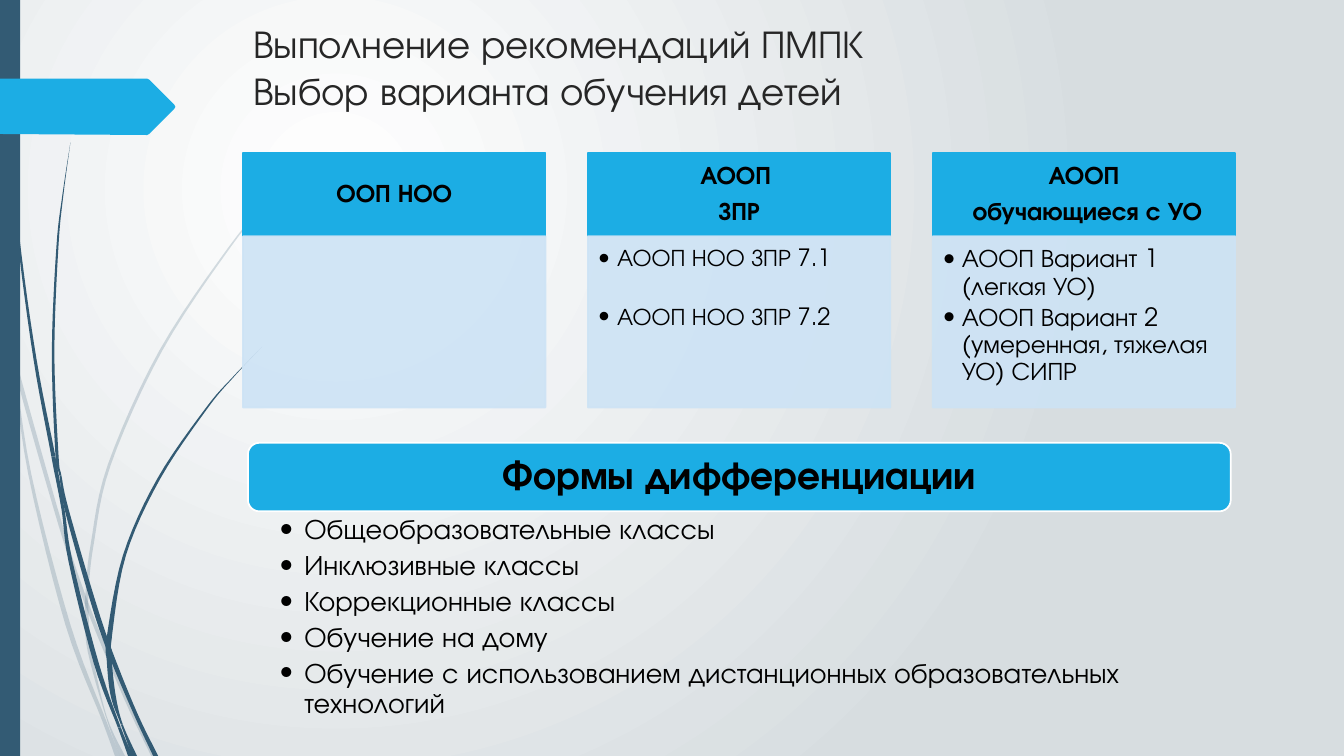
"""Build the slide on choosing a school programme for each child."""
from dataclasses import dataclass

from lxml import etree
from pptx import Presentation
from pptx.dml.color import RGBColor
from pptx.enum.shapes import MSO_SHAPE
from pptx.enum.text import MSO_ANCHOR, PP_ALIGN
from pptx.oxml.ns import qn
from pptx.shapes.autoshape import Shape
from pptx.slide import Slide
from pptx.util import Emu, Pt

RECT, ROUND = MSO_SHAPE.RECTANGLE, MSO_SHAPE.ROUNDED_RECTANGLE
TOP, MIDDLE = MSO_ANCHOR.TOP, MSO_ANCHOR.MIDDLE
LEFT, CENTER = PP_ALIGN.LEFT, PP_ALIGN.CENTER
WIDTH, HEIGHT = 12192000, 6858000
ROWS = 75
CELL = HEIGHT / ROWS
STEPS = 6


@dataclass(frozen=True)
class Theme:
    font: str = "TeX Gyre Adventor"
    accent: str = "1CADE4"
    dark: str = "335B74"
    panel: str = "CDE3F5"
    white: str = "FFFFFF"
    edge: str = "D7DDE0"
    ink: str = "000000"
    title_ink: str = "262626"
    title: float = 27.9
    banner: float = 28
    forms: float = 20
    head: float = 18
    line: float = 1.25


@dataclass(frozen=True)
class Box:
    x: float
    y: float
    w: float
    h: float


@dataclass(frozen=True)
class Style:
    size: float
    inset: tuple[float, float, float, float]
    color: str
    bold: bool = False
    align: int = LEFT
    anchor: int = TOP
    spacing: float = 0.9
    after: float = 0
    hang: float = 0


@dataclass(frozen=True)
class Column:
    head: str
    items: str = ""
    size: float = 18
    skip: float = 0


@dataclass(frozen=True)
class Blade:
    alpha: int
    cuts: tuple[float, ...]
    rows: tuple[tuple[float, float, float], ...]


THEME = Theme()
TITLE = "Выполнение рекомендаций ПМПК\vВыбор варианта обучения детей"
COLUMNS = (
    Column("ООП НОО"),
    Column("АООП \nЗПР", "АООП НОО ЗПР 7.1\nАООП НОО ЗПР 7.2", 17, 21),
    Column("АООП\n обучающиеся с УО",
           "АООП Вариант 1 (легкая УО)\n"
           "АООП Вариант 2 (умеренная, тяжелая УО) СИПР"),
)
FORMS = "\n".join((
    "Общеобразовательные классы", "Инклюзивные классы",
    "Коррекционные классы", "Обучение на дому",
    "Обучение с использованием дистанционных образовательных технологий",
))
BLADES = (
    Blade(20, (35, 71.4), (
        (28.2, 0, 0), (29.9, 0, .4), (35, 1.1, 1.3), (47, 2.8, 3.1),
        (62, 6.5, 7), (71.4, 10.1, 10.5), (75, 11.4, 11.9))),
    Blade(20, (59.9,), (
        (34.5, 1.4, 1.4), (37.6, 1.7, 2.1), (52.1, 5.8, 6.2),
        (59.9, 8.4, 8.8), (69.3, 12.3, 12.7), (75, 15, 15.5))),
    Blade(20, (58.6, 61, 71.1), (
        (15.3, 31.2, 31.2), (19.7, 26.8, 26.9), (24.5, 22.7, 22.9),
        (34.8, 15.8, 16.1), (46.1, 10.7, 11), (54, 9, 9.3),
        (58.6, 8.5, 8.8), (61, 8.45, 8.8), (64.6, 8.7, 9.1),
        (71.1, 10.5, 10.6), (75, 11.9, 12.4))),
    Blade(100, (45.3, 50.5, 72.2), (
        (0, .3, .4), (11, .7, .8), (23.3, 1.7, 1.9), (35.5, 3.3, 3.6),
        (45.3, 5.1, 5.5), (50.5, 6.1, 6.4), (55.7, 6.8, 7.2),
        (65.8, 9.3, 9.8), (72.2, 11.7, 12), (75, 12.7, 13.2))),
    Blade(100, (47.2, 64.5), (
        (14.1, 7, 7), (19.3, 6.2, 6.3), (24.5, 5.6, 5.8),
        (34.9, 5.15, 5.4), (45, 5.5, 5.8), (47.2, 5.9, 6.1),
        (50.5, 6.4, 6.8), (59.1, 8.8, 9.3), (64.5, 10.6, 11.1),
        (70.7, 13.2, 13.6), (75, 15.2, 15.7))),
    Blade(100, (63.2, 65.6, 71.9), (
        (34.4, 26, 26), (37.4, 23.1, 23.2), (40.5, 20.4, 20.6),
        (47.5, 15.6, 15.9), (55.1, 12.2, 12.5), (63.2, 10.6, 11.1),
        (65.6, 10.6, 11.1), (69.1, 11, 11.5), (71.9, 12, 12.2),
        (75, 13.1, 13.6))),
)
ARROW = ((0, 7.8), (14.6, 7.8), (14.8, 7.9), (17.3, 10.4), (17.4, 10.6),
         (17.3, 10.8), (14.8, 13.3), (14.6, 13.4), (0, 13.3))


def cells(count: float) -> Emu:
    """Turn grid cells into a length."""
    return Emu(round(count * CELL))


def paint(shape: Shape, fill: str, line: str = "", alpha: int = 100) -> None:
    """Colour a shape and its outline."""
    shape.shadow.inherit = False
    shape.fill.solid()
    shape.fill.fore_color.rgb = RGBColor.from_string(fill)
    if line:
        shape.line.color.rgb = RGBColor.from_string(line)
        shape.line.width = Pt(THEME.line)
    else:
        shape.line.fill.background()
    if alpha < 100:
        for tint in shape.element.spPr.iter(qn("a:srgbClr")):
            etree.SubElement(tint, qn("a:alpha"), val=str(alpha * 1000))


def write(shape: Shape, text: str, style: Style) -> None:
    """Fill a shape with styled text."""
    frame = shape.text_frame
    frame.word_wrap = True
    frame.vertical_anchor = style.anchor
    (frame.margin_left, frame.margin_top,
     frame.margin_right, frame.margin_bottom) = map(cells, style.inset)
    frame.text = text
    for para in frame.paragraphs:
        para.alignment = style.align
        para.line_spacing = style.spacing
        para.space_after = Pt(style.after)
        if style.hang:
            props = para._p.get_or_add_pPr()
            props.set("marL", str(cells(style.hang)))
            props.set("indent", str(-cells(style.hang)))
            etree.SubElement(props, qn("a:buFont"), typeface=THEME.font)
            etree.SubElement(props, qn("a:buChar"), char="•")
        for run in para.runs:
            run.font.name = THEME.font
            run.font.size = Pt(style.size)
            run.font.bold = style.bold
            run.font.color.rgb = RGBColor.from_string(style.color)


def block(slide: Slide, kind: int, box: Box, fill: str, line: str = "",
          alpha: int = 100) -> Shape:
    """Add a painted preset shape."""
    shape = slide.shapes.add_shape(
        kind, *map(cells, (box.x, box.y, box.w, box.h)))
    paint(shape, fill, line, alpha)
    return shape


def label(slide: Slide, box: Box, text: str, style: Style) -> None:
    """Add a text box."""
    area = map(cells, (box.x, box.y, box.w, box.h))
    write(slide.shapes.add_textbox(*area), text, style)


def outline(slide: Slide, points: list, fill: str, alpha: int = 100) -> None:
    """Add a closed freeform through grid points."""
    first, *rest = [(cells(x), cells(y)) for x, y in points]
    pen = slide.shapes.build_freeform(*first)
    pen.add_line_segments(rest, close=True)
    paint(pen.convert_to_shape(), fill, alpha=alpha)


def smooth(rows: tuple) -> list:
    """Round off a row list with a Catmull-Rom curve."""
    ends = (rows[0], *rows, rows[-1])
    curve = []
    for quad in zip(ends, ends[1:], ends[2:], ends[3:]):
        for step in range(STEPS):
            t = step / STEPS
            curve.append([
                b + t * (c - a) / 2 + t * t * (2 * a - 5 * b + 4 * c - d) / 2
                + t ** 3 * (3 * b - a - 3 * c + d) / 2
                for a, b, c, d in zip(*quad)])
    return [*curve, rows[-1]]


def backdrop(slide: Slide) -> None:
    """Lay a round gradient behind the slide."""
    fill = slide.background.fill
    fill.gradient()
    for stop, color in zip(fill.gradient_stops, (THEME.white, THEME.edge)):
        stop.color.rgb = RGBColor.from_string(color)
    grad = next(slide.element.iter(qn("a:gradFill")))
    grad.remove(grad.find(qn("a:lin")))
    shade = etree.SubElement(grad, qn("a:path"), attrib={"path": "circle"})
    etree.SubElement(shade, qn("a:fillToRect"), l="50000", t="50000",
                     r="100000", b="100000")


def decor(slide: Slide) -> None:
    """Draw the grass, the side bar and the arrow."""
    for blade in BLADES:
        curve = smooth(blade.rows)
        levels = [row[0] for row in blade.rows]
        marks = [0, *(levels.index(cut) * STEPS for cut in blade.cuts),
                 len(curve) - 1]
        for start, end in zip(marks, marks[1:]):
            part = curve[start:end + 1]
            points = [(left, y) for y, left, _ in part]
            points += [(right, y) for y, _, right in reversed(part)]
            outline(slide, points, THEME.dark, blade.alpha)
    block(slide, RECT, Box(0, 0, 2, ROWS), THEME.dark)
    outline(slide, ARROW, THEME.accent)


def main() -> None:
    """Draw and save the slide."""
    deck = Presentation()
    deck.slide_width, deck.slide_height = WIDTH, HEIGHT
    slide = deck.slides.add_slide(deck.slide_layouts[6])
    backdrop(slide)
    decor(slide)
    label(slide, Box(24.15, 1.45, 97.5, 13.5), TITLE,
          Style(THEME.title, (1, .5, 1, .5), THEME.title_ink, spacing=1))
    head = Style(THEME.head, (1.4, .8, 1.4, .8), THEME.ink, True, CENTER,
                 MIDDLE, after=6.3)
    for index, col in enumerate(COLUMNS):
        x = 24.12 + 34.21 * index
        top = block(slide, RECT, Box(x, 15.2, 30, 8.23), THEME.accent,
                    THEME.accent)
        write(top, col.head, head)
        body = block(slide, RECT, Box(x, 23.43, 30, 17), THEME.panel,
                     THEME.panel, 90)
        if col.items:
            write(body, col.items, Style(
                col.size, (1, 1, 1.3, 1.5), THEME.ink,
                after=col.size * .15 + col.skip, hang=1.9))
    banner = block(slide, ROUND, Box(24.6, 43.93, 97.5, 6.8), THEME.accent,
                   THEME.white)
    write(banner, "Формы дифференциации", Style(
        THEME.banner, (1.2, 1.2, 1.2, 1.2), THEME.ink, True, CENTER, MIDDLE))
    label(slide, Box(24.6, 50.85, 97.5, 21.7), FORMS, Style(
        THEME.forms, (3.1, .3, 1.6, .3), THEME.ink, after=4, hang=2.5))
    deck.save("out.pptx")


if __name__ == "__main__":
    main()
